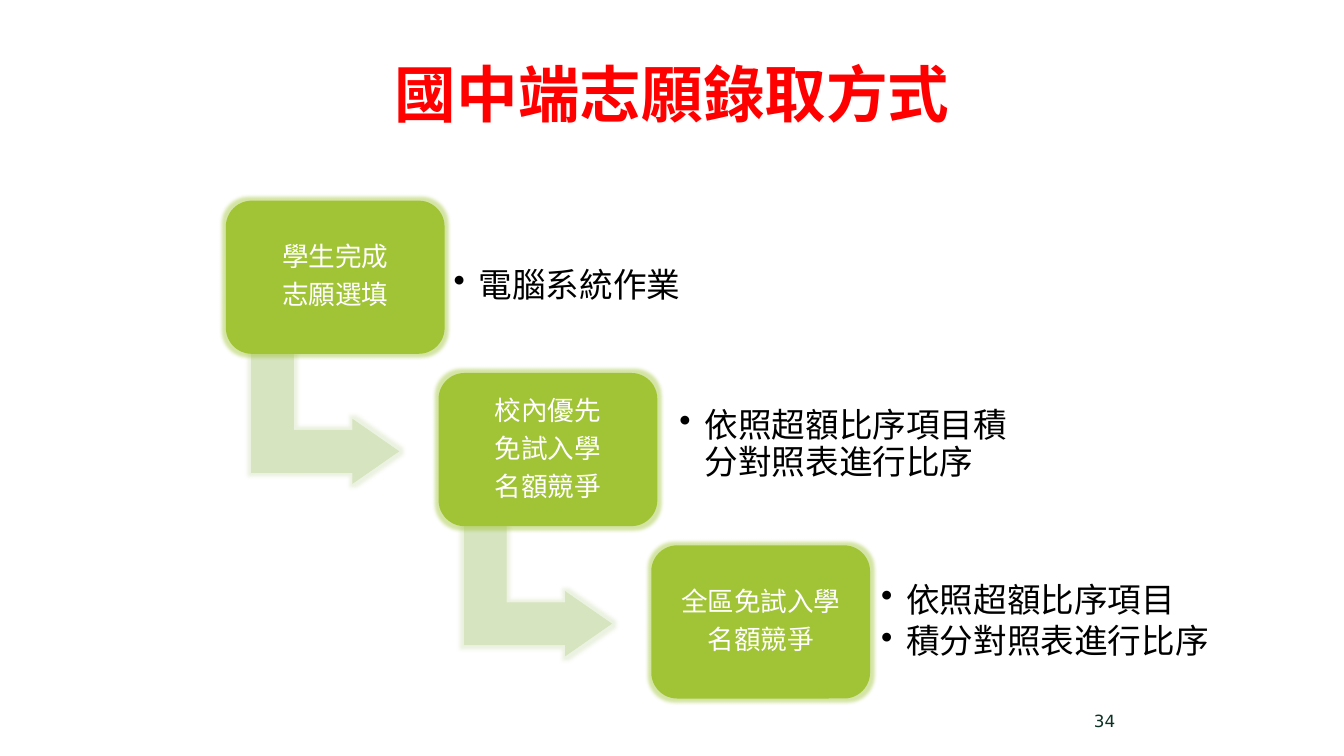
import pptx
import pptx.dml.color
import pptx.enum.shapes
import pptx.enum.text
import pptx.oxml.ns
import pptx.util
from lxml import etree

SHAPES = pptx.enum.shapes.MSO_SHAPE
ALIGN = pptx.enum.text.PP_ALIGN
qn = pptx.oxml.ns.qn


def px(length):
    return pptx.util.Emu(length * 9144)


def colour(code):
    return pptx.dml.color.RGBColor.from_string(code)


class Page:
    font = "Noto Sans CJK SC"
    green = "A0C435"
    pale = "D6E4BF"

    def __init__(self, deck):
        self.page = deck.slides.add_slide(deck.slide_layouts[6])

    def fill_text(self, shape, lines, size, code, align, margin=10, gap=0,
                  bullet=False, bold=False, font=None):
        frame = shape.text_frame
        frame.word_wrap = True
        frame.vertical_anchor = pptx.enum.text.MSO_ANCHOR.MIDDLE
        frame.margin_left = frame.margin_right = px(margin)
        frame.margin_top = frame.margin_bottom = px(margin)
        frame.text = "\n".join(lines)
        for para in frame.paragraphs:
            para.alignment = align
            props = para._p.get_or_add_pPr()
            if gap:
                para.line_spacing = 0.9
                after = etree.SubElement(props, qn("a:spcAft"))
                etree.SubElement(after, qn("a:spcPct"), val=str(gap * 1000))
            if bullet:
                props.set("marL", str(px(25)))
                props.set("indent", str(px(-25)))
                etree.SubElement(props, qn("a:buChar"), char="•")
            for span in para.runs:
                span.font.size = pptx.util.Pt(size)
                span.font.bold = bold
                span.font.color.rgb = colour(code)
                span.font.name = font or self.font
                etree.SubElement(span._r.get_or_add_rPr(), qn("a:ea"),
                                 typeface=font or self.font)

    def text(self, left, top, width, height, lines, size, code, align, **style):
        box = self.page.shapes.add_textbox(px(left), px(top), px(width), px(height))
        self.fill_text(box, lines, size, code, align, **style)

    def glowing(self, kind, left, top, width, height, code):
        shape = self.page.shapes.add_shape(kind, px(left), px(top), px(width), px(height))
        shape.shadow.inherit = False
        shape.fill.solid()
        shape.fill.fore_color.rgb = colour(code)
        shape.line.fill.background()
        effects = shape._element.spPr.find(qn("a:effectLst"))
        glow = etree.SubElement(effects, qn("a:glow"), rad=str(pptx.util.Pt(5)))
        tint = etree.SubElement(glow, qn("a:srgbClr"), val=code)
        etree.SubElement(tint, qn("a:alpha"), val="45000")
        return shape

    def step(self, left, top, lines):
        card = self.glowing(SHAPES.ROUNDED_RECTANGLE, left, top, 217, 152, self.green)
        card.adjustments[0] = 0.17
        self.fill_text(card, lines, 19, "FFFFFF", ALIGN.CENTER, margin=8, gap=35)

    def arrow(self, left, top):
        bend = self.glowing(SHAPES.BENT_UP_ARROW, left, top, 129, 147, self.pale)
        bend.rotation = 90
        for index, value in enumerate((0.33, 0.25, 0.36)):
            bend.adjustments[index] = value


def main():
    deck = pptx.Presentation()
    deck.slide_width, deck.slide_height = px(1333), px(750)
    page = Page(deck)
    page.text(67, 30, 1200, 125, ["國中端志願錄取方式"], 44, "FF0000",
              ALIGN.CENTER, bold=True)
    steps = [
        (["學生完成", "志願選填"], (440, 223, 287), ["電腦系統作業"]),
        (["校內優先", "免試入學", "名額競爭"], (664, 380, 351),
         ["依照超額比序項目積分對照表進行比序"]),
        (["全區免試入學", "名額競爭"], (864, 556, 413),
         ["依照超額比序項目", "積分對照表進行比序"]),
    ]
    for index, (label, (left, top, width), notes) in enumerate(steps):
        across, down = 211 * index, 171 * index
        if index < len(steps) - 1:
            page.arrow(258 + across, 342 + down)
        page.step(224 + across, 199 + down, label)
        page.text(left, top, width, 123, notes, 24, "000000", ALIGN.LEFT,
                  gap=15, bullet=True)
    page.text(883, 695, 233, 40, ["34"], 12, "0C3226", ALIGN.RIGHT,
              font="DejaVu Sans")
    deck.save("out.pptx")


if __name__ == "__main__":
    main()
